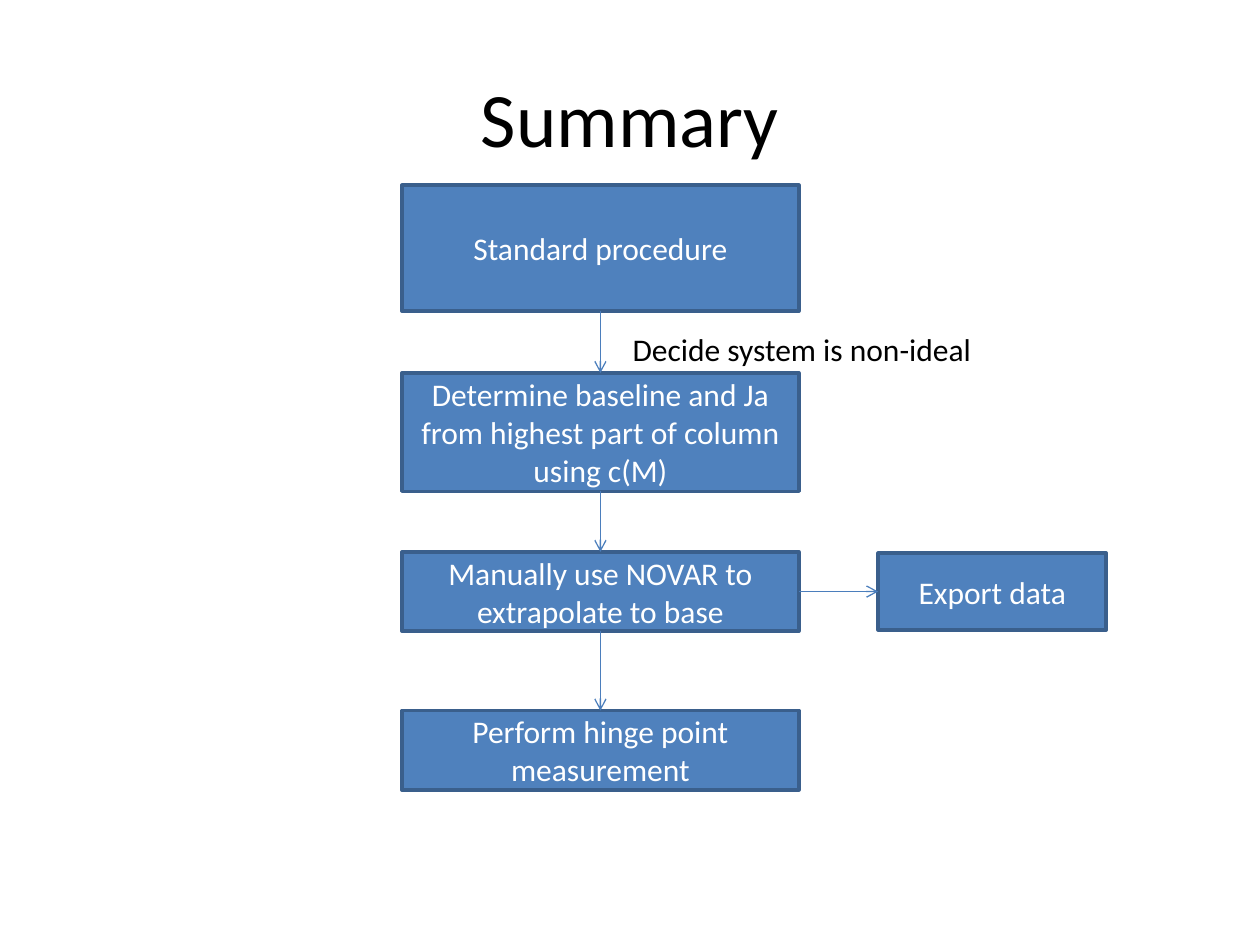
from lxml import etree
from pptx import Presentation
from pptx.dml.color import RGBColor
from pptx.enum.shapes import MSO_CONNECTOR, MSO_SHAPE
from pptx.enum.text import MSO_ANCHOR, MSO_AUTO_SIZE, PP_ALIGN
from pptx.oxml.ns import qn
from pptx.util import Inches, Pt

RECT, STRAIGHT = MSO_SHAPE.RECTANGLE, MSO_CONNECTOR.STRAIGHT
MIDDLE, TOP = MSO_ANCHOR.MIDDLE, MSO_ANCHOR.TOP
CENTER, LEFT = PP_ALIGN.CENTER, PP_ALIGN.LEFT
SITE_TOP, SITE_LEFT, SITE_BOTTOM, SITE_RIGHT = range(4)
TITLE_ONLY = 5

COLORS = {"text": "000000", "fill": "4F81BD", "edge": "3A5F8C",
          "arrow": "4B7EBC", "label": "FFFFFF"}

# Title: left, top, width, height; flow: left, top, column width (inches)
TITLE_BOX = (0.5, 0.3, 9, 1.25)
FLOW_BOX = (3.19, 1.47, 3.15)
# Steps: text, top and height in inches below the top of the flow
STEPS = [
    ("Standard procedure", 0, 1),
    ("Determine baseline and Ja from highest part of column using c(M)", 1.49, 0.94),
    ("Manually use NOVAR to extrapolate to base", 2.91, 0.63),
    ("Perform hinge point measurement", 4.17, 0.63),
]
EXPORT_STEP = 2


def color(name):
    return RGBColor.from_string(COLORS[name])


def write(shape, text, size, ink, align=CENTER, anchor=MIDDLE, wrap=True):
    tf = shape.text_frame
    tf.word_wrap, tf.vertical_anchor = wrap, anchor
    p = tf.paragraphs[0]
    p.alignment = align
    r = p.add_run()
    r.text = text
    for key, value in {"name": "Calibri", "size": Pt(size)}.items():
        setattr(r.font, key, value)
    r.font.color.rgb = color(ink)


def add_step(s, text, box):
    sp = s.shapes.add_shape(RECT, *map(Inches, box))
    sp.shadow.inherit = False
    sp.fill.solid()
    sp.fill.fore_color.rgb = color("fill")
    sp.line.color.rgb = color("edge")
    sp.line.width = Pt(2)
    write(sp, text, 18, "label")
    return sp


def add_arrow(s, start, start_site, end, end_site):
    line = s.shapes.add_connector(STRAIGHT, 0, 0, 0, 0)
    line.begin_connect(start, start_site)
    line.end_connect(end, end_site)
    line.line.color.rgb = color("arrow")
    line.line.width = Pt(0.75)
    ln = line.line._get_or_add_ln()
    etree.SubElement(ln, qn("a:tailEnd"), type="arrow")
    etree.SubElement(line._element.spPr, qn("a:effectLst"))


def add_title(s, box):
    title = s.shapes.title
    title.left, title.top, title.width, title.height = map(Inches, box)
    write(title, "Summary", 44, "text")


def add_flow(s, box):
    left, top, width = box

    # Main column of steps
    steps = [add_step(s, text, (left, top + y, width, h)) for text, y, h in STEPS]
    for upper, lower in zip(steps, steps[1:]):
        add_arrow(s, upper, SITE_BOTTOM, lower, SITE_TOP)

    # Condition beside the first arrow
    note = s.shapes.add_textbox(*map(Inches, (left + 0.55 * width, top + 1.1, 2.92, 0.4)))
    write(note, "Decide system is non-ideal", 18, "text", LEFT, TOP, wrap=False)
    note.text_frame.auto_size = MSO_AUTO_SIZE.SHAPE_TO_FIT_TEXT

    # Side branch
    export = add_step(s, "Export data", (left + 1.2 * width, top + 2.92, 1.81, 0.61))
    add_arrow(s, steps[EXPORT_STEP], SITE_RIGHT, export, SITE_LEFT)


def main():
    prs = Presentation()
    prs.slide_width, prs.slide_height = Inches(10), Inches(7.5)
    s = prs.slides.add_slide(prs.slide_layouts[TITLE_ONLY])
    add_title(s, TITLE_BOX)
    add_flow(s, FLOW_BOX)
    prs.save("out.pptx")


if __name__ == "__main__":
    main()
